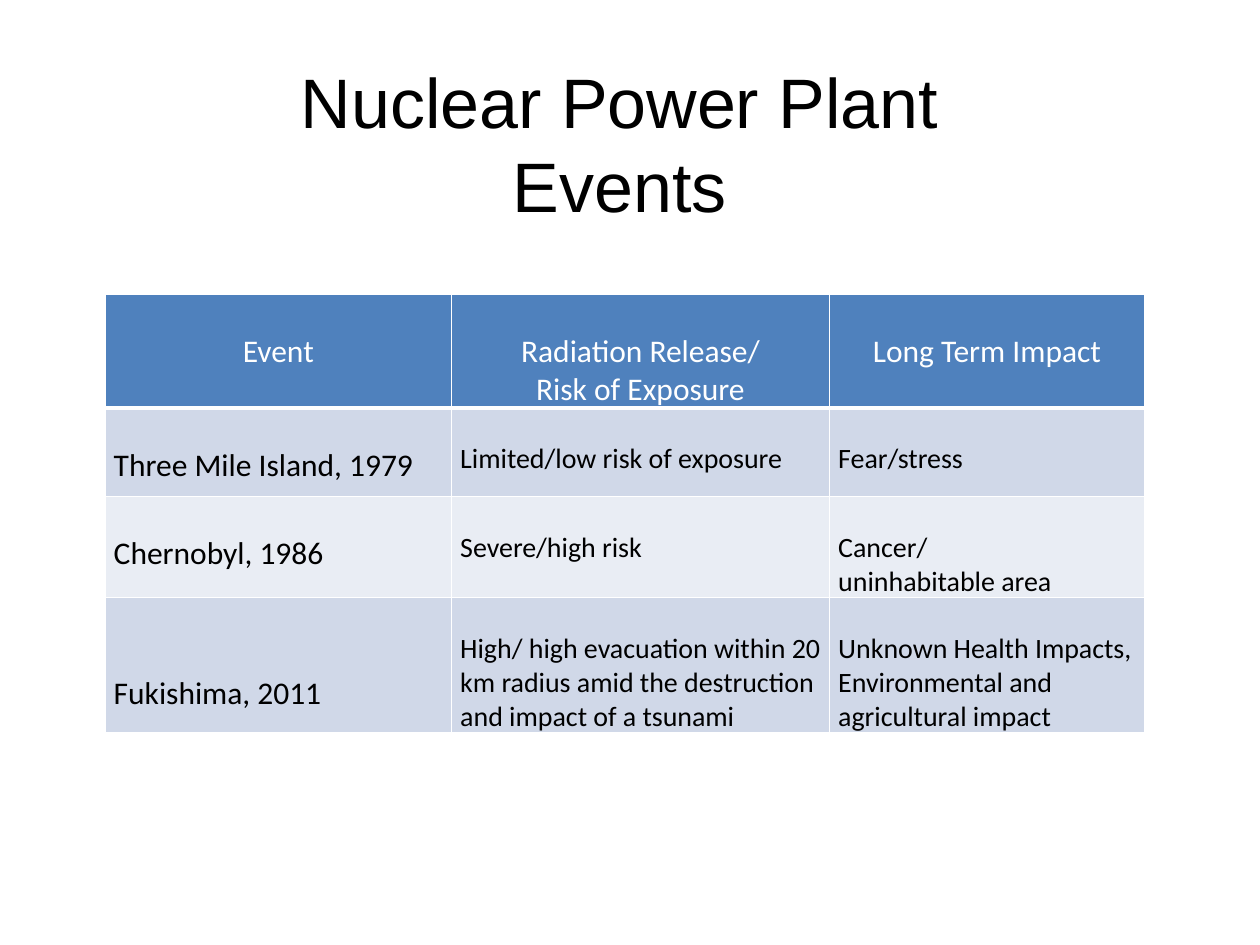
from lxml import etree
from pptx import Presentation
from pptx import util as u
from pptx.dml.color import RGBColor
from pptx.enum import text
from pptx.oxml import ns

COLORS = {
    "header": "4F81BD",
    "band": "D0D8E8",
    "plain": "E9EDF4",
    "white": "FFFFFF",
    "black": "000000",
}
COL_WIDTHS = [198, 216, 180]
ROW_HEIGHTS = [50.4, 50.4, 50.4, 68.4]
EVENTS = [
    ["Event", "Radiation Release/\nRisk of Exposure", "Long Term Impact"],
    ["Three Mile Island, 1979", "Limited/low risk of exposure", "Fear/stress"],
    ["Chernobyl, 1986", "Severe/high risk", "Cancer/\nuninhabitable area"],
    ["Fukishima, 2011",
     "High/ high evacuation within 20 km radius amid the destruction and impact of a tsunami",
     "Unknown Health Impacts, Environmental and agricultural impact"],
]


class SlideBuilder:
    def __init__(self, prs):
        self.s = prs.slides.add_slide(prs.slide_layouts[5])

    def format(self, tf, font, size, color, align):
        for p in tf.paragraphs:
            p.alignment = align
            for r in p.runs:
                r.font.name = font
                r.font.size = u.Pt(size)
                r.font.bold = False
                r.font.color.rgb = RGBColor.from_string(COLORS[color])

    def title(self, content, left, top, width, height):
        sp = self.s.shapes.title
        sp.left, sp.top, sp.width, sp.height = map(u.Pt, (left, top, width, height))
        tf = sp.text_frame
        tf.text = content
        tf.word_wrap = True
        tf.auto_size = text.MSO_AUTO_SIZE.SHAPE_TO_FIT_TEXT
        tf.vertical_anchor = text.MSO_ANCHOR.TOP
        tf.paragraphs[0].line_spacing = u.Pt(48)
        self.format(tf, "Arial", 40, "black", text.PP_ALIGN.CENTER)

    def borders(self, cell, bottom):
        tcPr = cell._tc.get_or_add_tcPr()
        for side, width in (("L", 1), ("R", 1), ("T", 1), ("B", bottom)):
            ln = etree.SubElement(tcPr, ns.qn(f"a:ln{side}"), w=str(u.Pt(width)))
            fill = etree.SubElement(ln, ns.qn("a:solidFill"))
            etree.SubElement(fill, ns.qn("a:srgbClr"), val=COLORS["white"])

    def cell(self, cell, content, row, col):
        header = row == 0
        size = 18 if header or col == 0 else 16
        lines_above = 2 if (row, col) == (3, 0) else 1
        cell.margin_left = cell.margin_right = u.Pt(5)
        cell.margin_top = u.Pt(round(size * 1.22 * lines_above, 1))
        cell.margin_bottom = u.Pt(0)
        cell.text_frame.text = content
        align = text.PP_ALIGN.CENTER if header else text.PP_ALIGN.LEFT
        self.format(cell.text_frame, "Calibri", size, "white" if header else "black", align)
        self.borders(cell, 3 if header else 1)
        cell.fill.solid()
        fill = "header" if header else ("band" if row % 2 else "plain")
        cell.fill.fore_color.rgb = RGBColor.from_string(COLORS[fill])

    def table(self, rows, left, top, widths, heights):
        size = map(u.Pt, (left, top, sum(widths), sum(heights)))
        table = self.s.shapes.add_table(len(rows), len(widths), *size).table
        for column, width in zip(table.columns, widths):
            column.width = u.Pt(width)
        for i, (row, height) in enumerate(zip(rows, heights)):
            table.rows[i].height = u.Pt(height)
            for j, content in enumerate(row):
                self.cell(table.cell(i, j), content, i, j)


def main():
    prs = Presentation()
    prs.slide_width, prs.slide_height = u.Pt(720), u.Pt(540)
    slide = SlideBuilder(prs)
    slide.table(EVENTS, 60, 168, COL_WIDTHS, ROW_HEIGHTS)
    slide.title("Nuclear Power Plant Events", 120, 30, 468, 55.4)
    prs.save("out.pptx")


if __name__ == "__main__":
    main()
